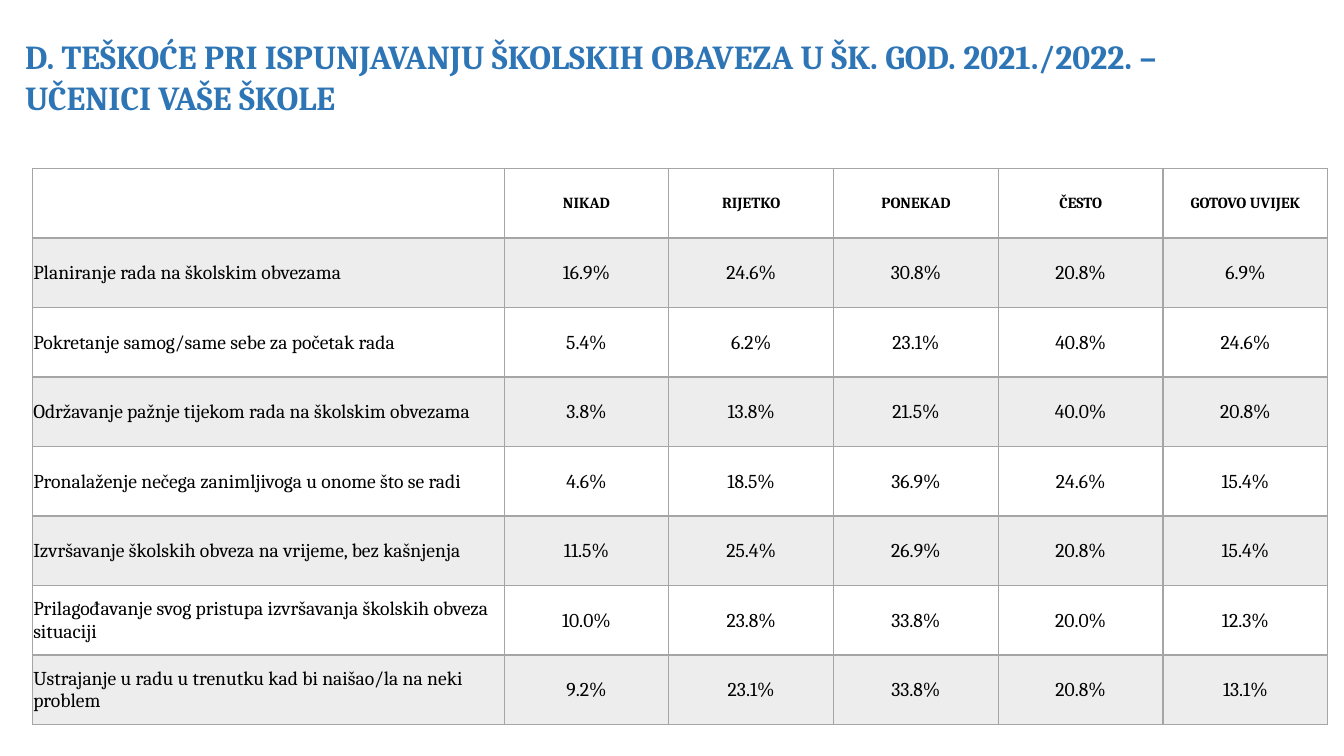
from lxml.etree import SubElement
from pptx import Presentation
from pptx.dml.color import RGBColor
from pptx.enum.text import MSO_ANCHOR, MSO_AUTO_SIZE, PP_ALIGN
from pptx.oxml.ns import qn
from pptx.util import Inches, Pt

FONT = "Cambria"
BLUE, BLACK, GRAY = "2E75B6", "000000", "A5A5A5"
BAND_OPACITY = 20

TITLE = "D. TEŠKOĆE PRI ISPUNJAVANJU ŠKOLSKIH OBAVEZA U ŠK. GOD. 2021./2022. – UČENICI VAŠE ŠKOLE"
HEADINGS = ["", "NIKAD", "RIJETKO", "PONEKAD", "ČESTO", "GOTOVO UVIJEK"]
ANSWERS = [
    ("Planiranje rada na školskim obvezama", 16.9, 24.6, 30.8, 20.8, 6.9),
    ("Pokretanje samog/same sebe za početak rada", 5.4, 6.2, 23.1, 40.8, 24.6),
    ("Održavanje pažnje tijekom rada na školskim obvezama", 3.8, 13.8, 21.5, 40.0, 20.8),
    ("Pronalaženje nečega zanimljivoga u onome što se radi", 4.6, 18.5, 36.9, 24.6, 15.4),
    ("Izvršavanje školskih obveza na vrijeme, bez kašnjenja", 11.5, 25.4, 26.9, 20.8, 15.4),
    ("Prilagođavanje svog pristupa izvršavanja školskih obveza situaciji", 10.0, 23.8, 33.8, 20.0, 12.3),
    ("Ustrajanje u radu u trenutku kad bi naišao/la na neki problem", 9.2, 23.1, 33.8, 20.8, 13.1),
]


def color(value):
    return RGBColor.from_string(value)


def write(frame, text, size=14, bold=False, fill=BLACK, align=PP_ALIGN.LEFT):
    para = frame.paragraphs[0]
    para.alignment = align
    span = para.add_run()
    span.text = text
    span.font.name = FONT
    span.font.size = Pt(size)
    span.font.bold = bold
    span.font.color.rgb = color(fill)


def set_borders(cell, bottom=1):
    """Outline a cell; the border lines must precede its fill in the XML."""
    properties = cell._tc.get_or_add_tcPr()
    widths = {"a:lnL": 1, "a:lnR": 1, "a:lnT": 1, "a:lnB": bottom}
    for index, (tag, width) in enumerate(widths.items()):
        line = SubElement(properties, qn(tag), w=str(Pt(width)))
        solid = SubElement(line, qn("a:solidFill"))
        SubElement(solid, qn("a:srgbClr"), val=GRAY)
        properties.insert(index, line)


def set_band(cell, shaded):
    if not shaded:
        cell.fill.background()
        return
    cell.fill.solid()
    cell.fill.fore_color.rgb = color(GRAY)
    tint = cell._tc.tcPr.find(qn("a:solidFill"))[0]
    SubElement(tint, qn("a:alpha"), val=str(BAND_OPACITY * 1000))


def add_title(page, left, top, width, height):
    box = page.shapes.add_textbox(Inches(left), Inches(top), Inches(width), Inches(height))
    box.text_frame.word_wrap = True
    box.text_frame.auto_size = MSO_AUTO_SIZE.SHAPE_TO_FIT_TEXT
    write(box.text_frame, TITLE, size=24, bold=True, fill=BLUE)


def add_answers(page, left, top, width, height, label_width=4.68):
    rows = [HEADINGS] + [(label, *(f"{value:.1f}%" for value in values)) for label, *values in ANSWERS]
    table = page.shapes.add_table(
        len(rows), len(HEADINGS), Inches(left), Inches(top), Inches(width), Inches(height)
    ).table

    # Wide label column, equal answer columns and rows
    answer_width = (width - label_width) / (len(HEADINGS) - 1)
    for index, column in enumerate(table.columns):
        column.width = Inches(answer_width if index else label_width)
    for row in table.rows:
        row.height = Inches(height / len(rows))

    # Header row, then alternately shaded answer rows
    for row_index, texts in enumerate(rows):
        header = row_index == 0
        for column_index, text in enumerate(texts):
            cell = table.cell(row_index, column_index)
            cell.vertical_anchor = MSO_ANCHOR.MIDDLE
            cell.margin_left = cell.margin_right = cell.margin_top = Inches(0.01)
            cell.margin_bottom = 0
            set_band(cell, shaded=row_index % 2 == 1)
            set_borders(cell, bottom=2 if header else 1)
            if text:
                write(cell.text_frame, text, size=11 if header else 14, bold=header,
                      align=PP_ALIGN.CENTER if column_index else PP_ALIGN.LEFT)


def main():
    deck = Presentation()
    deck.slide_width, deck.slide_height = Inches(13.33), Inches(7.5)
    page = deck.slides.add_slide(deck.slide_layouts[6])
    add_title(page, 0.15, 0.31, 12.48, 0.91)
    add_answers(page, 0.32, 1.67, 12.85, 5.52)
    deck.save("out.pptx")


if __name__ == "__main__":
    main()
